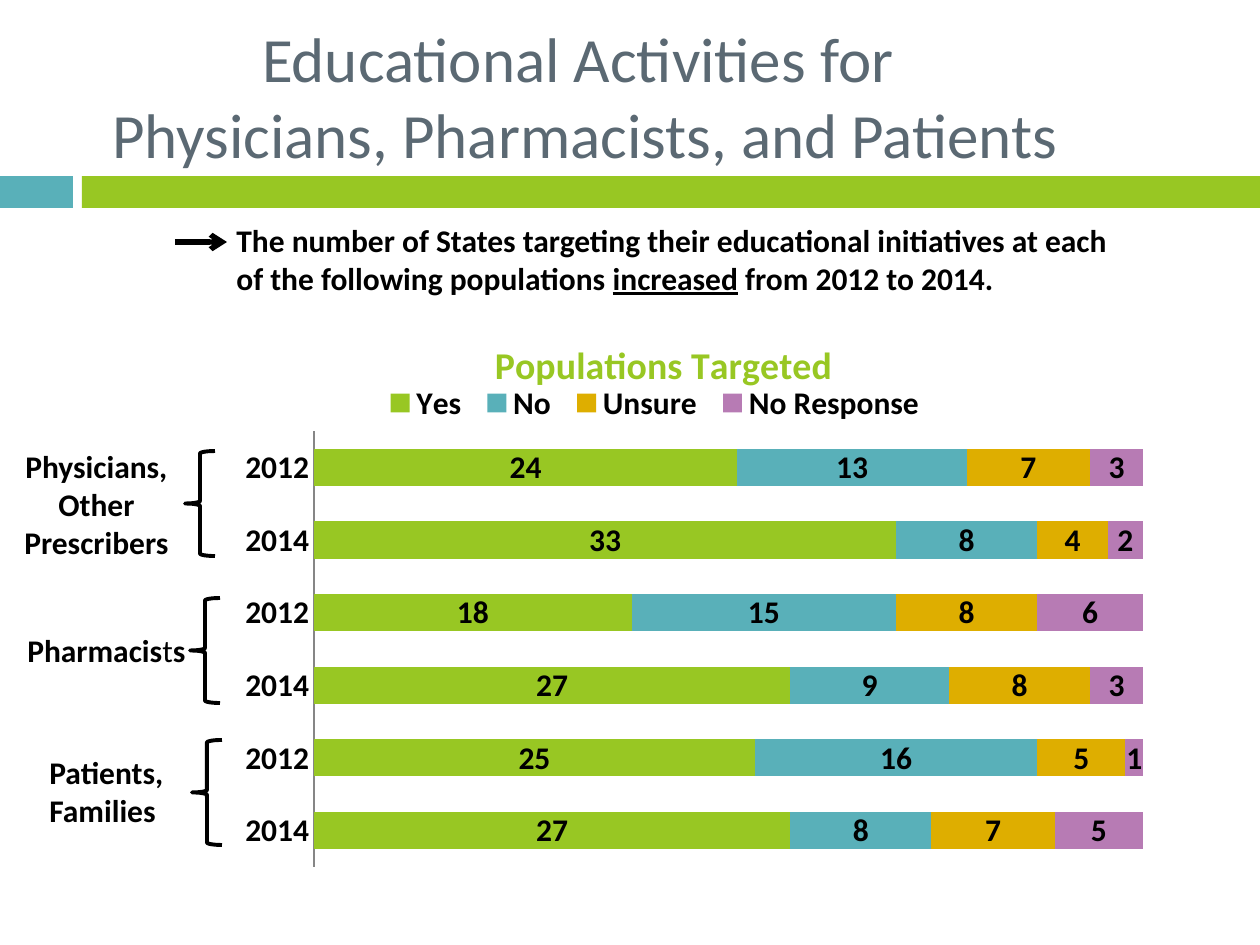
import pptx
import pptx.chart.data
import pptx.dml.color
import pptx.enum.chart
import pptx.enum.shapes
import pptx.enum.text
import pptx.oxml
import pptx.oxml.ns
import pptx.util

EMU_PER_PX = 914400 / 126
THEME = {
    "font": "Calibri",
    "colors": {
        name: pptx.dml.color.RGBColor.from_string(value)
        for name, value in {
            "green": "98C723", "teal": "59B0B9", "gold": "DEAE00", "purple": "B77BB4",
            "slate": "5B6973", "black": "000000", "gray": "868686",
        }.items()
    },
    "title": pptx.util.Pt(36),
    "chart_title": pptx.util.Pt(21.6),
    "text": pptx.util.Pt(18),
    "brace": pptx.util.Pt(2.25),
    "arrow": pptx.util.Pt(3),
}
COLORS = THEME["colors"]


def px(*lengths):
    return [pptx.util.Emu(round(length * EMU_PER_PX)) for length in lengths]


def style_font(font, size="text", color="black", bold=True):
    for name, value in {"name": THEME["font"], "size": THEME[size], "bold": bold}.items():
        setattr(font, name, value)
    font.color.rgb = COLORS[color]


presentation = pptx.Presentation()
presentation.slide_width, presentation.slide_height = px(1260, 945)
slide = presentation.slides.add_slide(presentation.slide_layouts[5])
shapes = slide.shapes

for left, width, color in [(0, 73, "teal"), (82, 1178, "green")]:
    bar = shapes.add_shape(pptx.enum.shapes.MSO_SHAPE.RECTANGLE, *px(left, 176, width, 32))
    bar.shadow.inherit = False
    bar.fill.solid()
    bar.fill.fore_color.rgb = COLORS[color]
    bar.line.fill.background()

title = shapes.title
title.left, title.top, title.width, title.height = px(28, 32, 1114, 172)
title.text_frame.text = "Educational Activities for \vPhysicians, Pharmacists, and Patients"
title_format = {
    "word_wrap": True,
    "auto_size": pptx.enum.text.MSO_AUTO_SIZE.NONE,
    "vertical_anchor": pptx.enum.text.MSO_ANCHOR.MIDDLE,
    "margin_top": 0,
    "margin_bottom": px(45)[0],
}
for name, value in title_format.items():
    setattr(title.text_frame, name, value)
title_paragraph = title.text_frame.paragraphs[0]
title_paragraph.alignment = pptx.enum.text.PP_ALIGN.CENTER
for run in title_paragraph.runs:
    style_font(run.font, "title", "slate", False)

chart_data = pptx.chart.data.CategoryChartData()
chart_data.categories = ["2014", "2012"] * 3
series_values = {
    "Yes": ("green", [27, 25, 27, 18, 33, 24]),
    "No": ("teal", [8, 16, 9, 15, 8, 13]),
    "Unsure": ("gold", [7, 5, 8, 8, 4, 7]),
    "No Response": ("purple", [5, 1, 3, 6, 2, 3]),
}
for name, (color, values) in series_values.items():
    chart_data.add_series(name, values)
chart_width, chart_height = 1011, 610
chart = shapes.add_chart(
    pptx.enum.chart.XL_CHART_TYPE.BAR_STACKED,
    *px(190, 278, chart_width, chart_height),
    chart_data,
).chart
style_font(chart.font, bold=False)

chart.has_title = True
chart.chart_title.text_frame.text = "Populations Targeted"
style_font(chart.chart_title.text_frame.paragraphs[0].runs[0].font, "chart_title", "green")
chart.has_legend = True
chart.legend.position = pptx.enum.chart.XL_LEGEND_POSITION.TOP
chart.legend.include_in_layout = False
style_font(chart.legend.font)

plot = chart.plots[0]
plot.gap_width, plot.overlap, plot.vary_by_categories = 95, 100, False
for series in plot.series:
    series.format.fill.solid()
    series.format.fill.fore_color.rgb = COLORS[series_values[series.name][0]]
    series.data_labels.show_value = True
    style_font(series.data_labels.font)

category_axis = chart.category_axis
category_axis.major_tick_mark = pptx.enum.chart.XL_TICK_MARK.NONE
category_axis.format.line.color.rgb = COLORS["gray"]
style_font(category_axis.tick_labels.font)
value_axis_format = {
    "minimum_scale": 0, "maximum_scale": 50, "has_major_gridlines": False, "visible": False,
}
for name, value in value_axis_format.items():
    setattr(chart.value_axis, name, value)

chart_layouts = {
    "c:title": {"x": 298, "y": 53},
    "c:legend": {"x": 185, "y": 105, "w": 560, "h": 40},
    "c:plotArea": {"x": 124, "y": 153, "w": 882, "h": 436},
}
chart_element = chart.element.find(pptx.oxml.ns.qn("c:chart"))
for tag, lengths in chart_layouts.items():
    part = chart_element.find(pptx.oxml.ns.qn(tag))
    for old_layout in part.findall(pptx.oxml.ns.qn("c:layout")):
        part.remove(old_layout)
    is_plot = tag == "c:plotArea"
    settings = '<c:layoutTarget val="inner"/>' if is_plot else ""
    settings += '<c:xMode val="edge"/><c:yMode val="edge"/>'
    for name, length in lengths.items():
        fraction = length / (chart_width if name in "xw" else chart_height)
        settings += f'<c:{name} val="{fraction:.4f}"/>'
    layout = pptx.oxml.parse_xml(
        f'<c:layout {pptx.oxml.ns.nsdecls("c")}><c:manualLayout>{settings}</c:manualLayout></c:layout>'
    )
    part.insert(0 if is_plot else 1, layout)

LEFT, CENTER = pptx.enum.text.PP_ALIGN.LEFT, pptx.enum.text.PP_ALIGN.CENTER
text_boxes = [
    ((9, 441, 175, 127), CENTER, [[("Physicians,", {})], [("Other Prescribers", {})]]),
    ((15, 625, 190, 50), LEFT, [[("Pharmacis", {}), ("t", {"bold": False}), ("s", {})]]),
    ((37, 747, 149, 89), LEFT, [[("Patients, Families", {})]]),
    ((224, 215, 1036, 127), LEFT, [
        [("The number of States targeting their educational initiatives at each", {})],
        [("of the following populations ", {}), ("increased", {"underline": True}),
         (" from 2012 to 2014.", {})],
    ]),
]
for box, alignment, paragraphs in text_boxes:
    text_frame = shapes.add_textbox(*px(*box)).text_frame
    text_frame.word_wrap = True
    for index, runs in enumerate(paragraphs):
        paragraph = text_frame.add_paragraph() if index else text_frame.paragraphs[0]
        paragraph.alignment = alignment
        for text, font_format in runs:
            run = paragraph.add_run()
            run.text = text
            style_font(run.font)
            for name, value in font_format.items():
                setattr(run.font, name, value)

for left, top in [(185, 451), (190, 598), (192, 740)]:
    brace = shapes.add_shape(pptx.enum.shapes.MSO_SHAPE.LEFT_BRACE, *px(left, top, 30, 105))
    brace.shadow.inherit = False
    brace.fill.background()
    brace.line.color.rgb = COLORS["black"]
    brace.line.width = THEME["brace"]

arrow = shapes.add_connector(pptx.enum.shapes.MSO_CONNECTOR.STRAIGHT, *px(175, 242, 227, 242))
arrow.line.color.rgb = COLORS["black"]
arrow.line.width = THEME["arrow"]
namespace = pptx.oxml.ns.nsdecls("a")
arrow.line._get_or_add_ln().append(pptx.oxml.parse_xml(f'<a:tailEnd {namespace} type="arrow"/>'))
arrow._element.spPr.append(pptx.oxml.parse_xml(f"<a:effectLst {namespace}/>"))

presentation.save("out.pptx")
